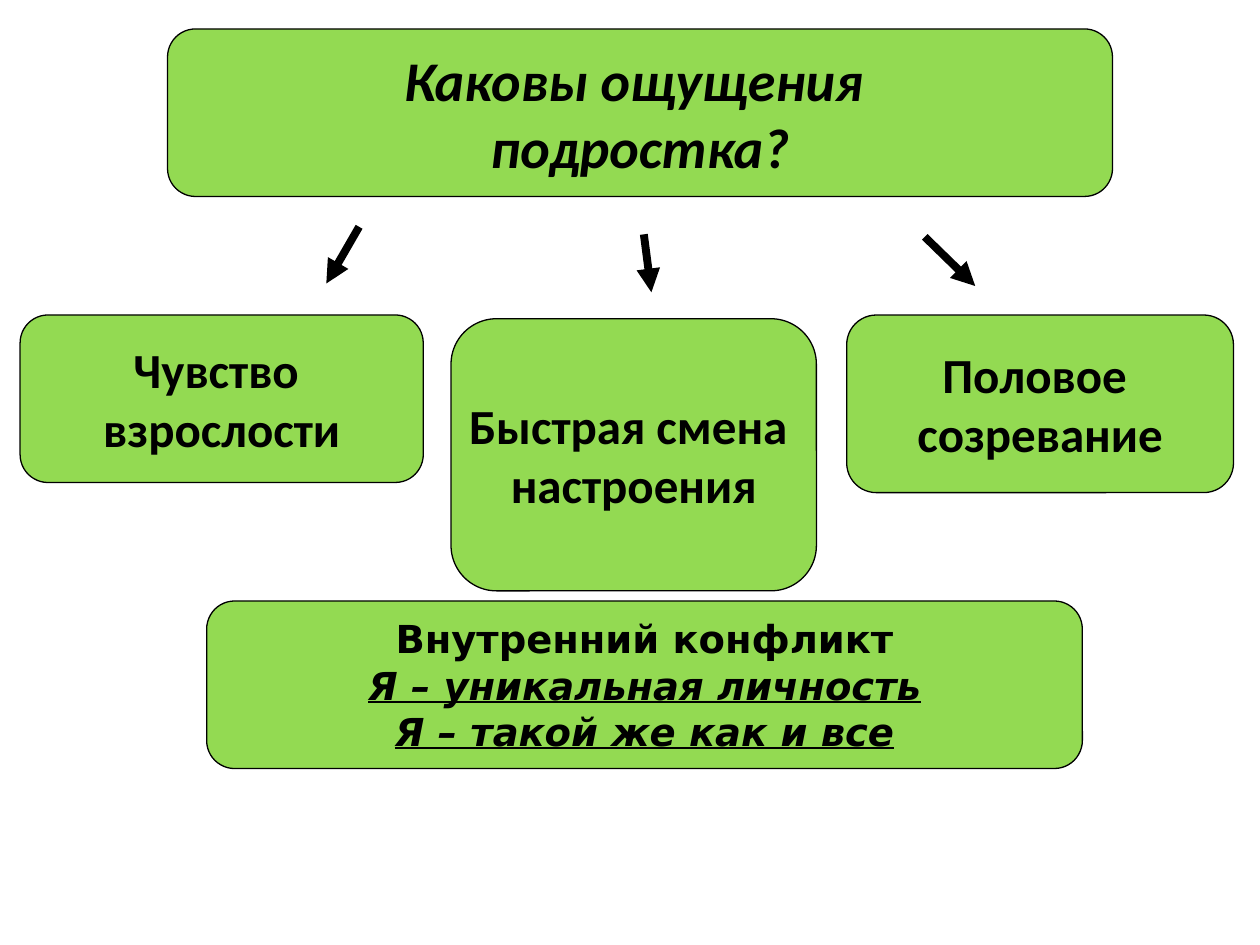
from dataclasses import dataclass

from lxml.etree import SubElement
from pptx import Presentation
from pptx.dml.color import RGBColor
from pptx.enum.shapes import MSO_CONNECTOR, MSO_SHAPE
from pptx.enum.text import MSO_ANCHOR, MSO_AUTO_SIZE, PP_ALIGN
from pptx.oxml.ns import qn
from pptx.util import Inches, Pt


@dataclass(frozen=True)
class Theme:
    green: RGBColor = RGBColor(0x93, 0xDA, 0x52)
    black: RGBColor = RGBColor(0, 0, 0)
    font: str = "Calibri"
    conflict_font: str = "DejaVu Sans"
    title_size: int = 32
    branch_size: int = 28
    conflict_size: int = 22
    outline: float = 0.75
    arrow: float = 4.5


THEME = Theme()
TITLE_AREA = (1.33, 0.23, 7.5, 1.33)
CONFLICT_AREA = (1.64, 4.77, 6.95, 1.33)

# Each branch: lines of text, box area, arrow start, arrow end
BRANCHES = [
    (["Чувство ", "взрослости"], (0.16, 2.5, 3.2, 1.33), (2.85, 1.8), (2.59, 2.25)),
    (["Половое ", "созревание"], (6.72, 2.5, 3.07, 1.41), (7.34, 1.88), (7.74, 2.27)),
    (["Быстрая смена ", "настроения"], (3.58, 2.53, 2.9, 2.16), (5.11, 1.86), (5.17, 2.32)),
]


def add_box(shapes, area):
    box = shapes.add_shape(MSO_SHAPE.ROUNDED_RECTANGLE, *map(Inches, area))
    box.adjustments[0] = 0.167
    box.shadow.inherit = False
    box.fill.solid()
    box.fill.fore_color.rgb = THEME.green
    box.line.color.rgb = THEME.black
    box.line.width = Pt(THEME.outline)
    return box


def write_lines(shape, lines, size, font=THEME.font, italic=False):
    frame = shape.text_frame
    frame.text = "\n".join(lines)
    frame.word_wrap = False
    frame.auto_size = MSO_AUTO_SIZE.NONE
    frame.vertical_anchor = MSO_ANCHOR.MIDDLE
    for para in frame.paragraphs:
        para.alignment = PP_ALIGN.CENTER
        for span in para.runs:
            span.font.name = font
            span.font.size = Pt(size)
            span.font.bold = True
            span.font.italic = italic
            span.font.color.rgb = THEME.black


def add_arrow(shapes, start, end):
    arrow = shapes.add_connector(MSO_CONNECTOR.STRAIGHT, *map(Inches, start + end))
    arrow.line.color.rgb = THEME.black
    arrow.line.width = Pt(THEME.arrow)
    SubElement(arrow.line._get_or_add_ln(), qn("a:tailEnd"), type="triangle")
    SubElement(arrow.element.spPr, qn("a:effectLst"))


def add_title(slide):
    box = add_box(slide.shapes, TITLE_AREA)
    title = slide.shapes.title
    title.left, title.top, title.width, title.height = map(Inches, TITLE_AREA)
    write_lines(title, ["Каковы ощущения ", "подростка?"], THEME.title_size, italic=True)
    # Bring the title text in front of its box
    box.element.addnext(title.element)


def add_conflict(slide):
    box = add_box(slide.shapes, CONFLICT_AREA)
    lines = ["Внутренний конфликт", "Я – уникальная личность", "Я – такой же как и все"]
    write_lines(box, lines, THEME.conflict_size, THEME.conflict_font)
    for para in box.text_frame.paragraphs[1:]:
        for span in para.runs:
            span.font.italic = True
            span.font.underline = True


def add_branch(slide, lines, area, start, end):
    group = slide.shapes.add_group_shape()
    write_lines(add_box(group.shapes, area), lines, THEME.branch_size)
    add_arrow(group.shapes, start, end)


def main():
    deck = Presentation()
    deck.slide_width, deck.slide_height = Inches(10), Inches(7.5)
    page = deck.slides.add_slide(deck.slide_layouts[5])

    # Question and the inner conflict
    add_title(page)
    add_conflict(page)

    # Three feelings, each with its arrow
    for branch in BRANCHES:
        add_branch(page, *branch)

    deck.save("out.pptx")


if __name__ == "__main__":
    main()
